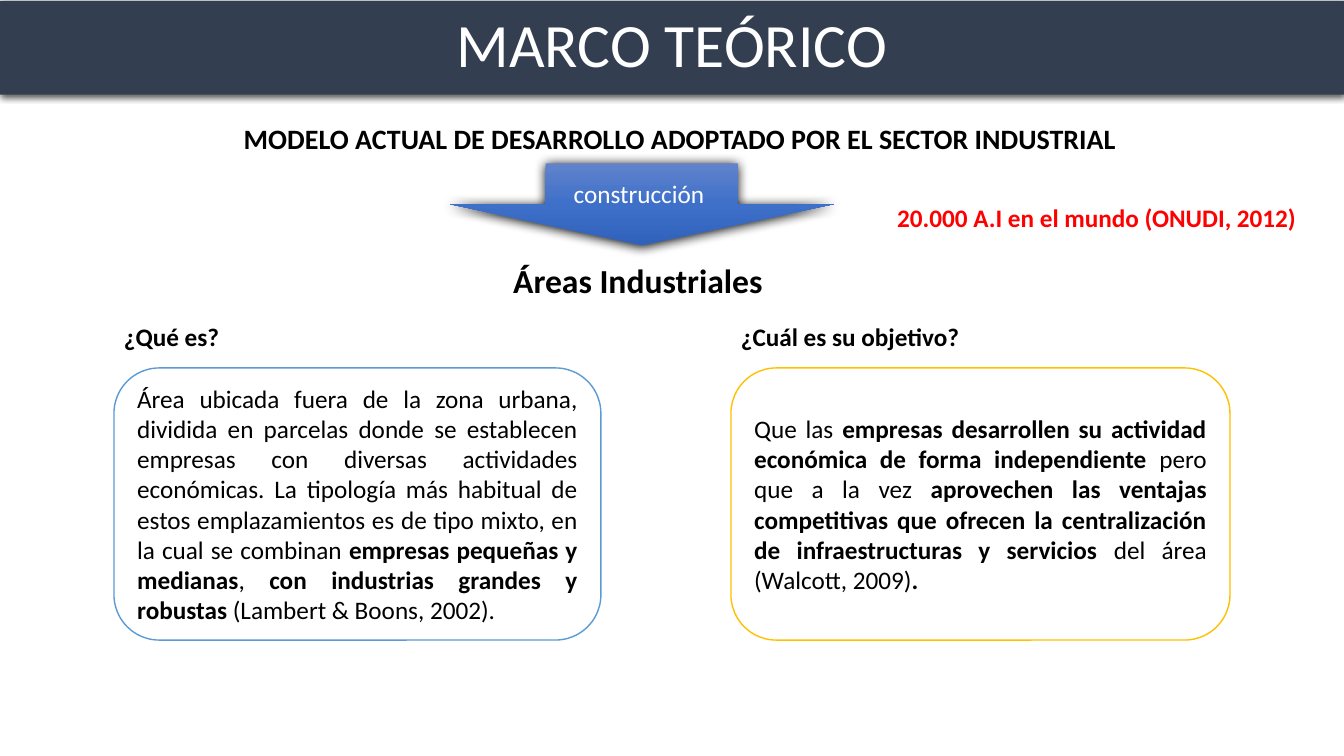
from copy import deepcopy
from dataclasses import dataclass

from lxml.etree import SubElement
from pptx import Presentation
from pptx.dml.color import RGBColor
from pptx.enum.shapes import MSO_SHAPE
from pptx.enum.text import MSO_ANCHOR, PP_ALIGN
from pptx.oxml.ns import qn
from pptx.util import Inches, Pt


@dataclass(frozen=True)
class Theme:
    font: str = "Calibri"
    banner: str = "333F50"
    ink: str = "000000"
    paper: str = "FFFFFF"
    alert: str = "FF0000"
    blue: str = "5B9BD5"
    gold: str = "FFC000"
    arrow: tuple = ("6183CB", "3E70CA", "3062BB")
    title: int = 44
    caption: int = 24
    headline: int = 20
    body: int = 18


THEME = Theme()


@dataclass(frozen=True)
class Box:
    left: int
    top: int
    width: int
    height: int

    def share(self, x, y, w, h):
        """Return an inner box given in percent of this one."""
        return Box(int(self.left + self.width * x / 100),
                   int(self.top + self.height * y / 100),
                   int(self.width * w / 100), int(self.height * h / 100))

    def bounds(self):
        return self.left, self.top, self.width, self.height


def write(shape, runs, size, color=THEME.ink, align=PP_ALIGN.LEFT, wrap=True):
    """Fill a shape with one paragraph of (text, bold) runs."""
    frame = shape.text_frame
    frame.word_wrap = wrap
    para = frame.paragraphs[0]
    para.alignment = align
    for text, bold in runs:
        span = para.add_run()
        span.text = text
        span.font.name = THEME.font
        span.font.size = Pt(size)
        span.font.bold = bold
        span.font.color.rgb = RGBColor.from_string(color)
    return para


def add_label(page, box, text, size, **style):
    write(page.shapes.add_textbox(*box.bounds()), [(text, True)], size, **style)


def add_block(page, box, preset, fill=None, line=None):
    shape = page.shapes.add_shape(preset, *box.bounds())
    shape.shadow.inherit = False
    shape.text_frame.vertical_anchor = MSO_ANCHOR.MIDDLE
    if fill:
        shape.fill.solid()
        shape.fill.fore_color.rgb = RGBColor.from_string(fill)
    if line:
        shape.line.color.rgb = RGBColor.from_string(line)
        shape.line.width = Pt(1)
    else:
        shape.line.fill.background()
    return shape


def drop_shadow(shape, opacity, blur, distance):
    effects = shape.element.spPr.find(qn("a:effectLst"))
    shadow = SubElement(effects, qn("a:outerShdw"), blurRad=str(Pt(blur)),
                        dist=str(Pt(distance)), dir="5400000", rotWithShape="0")
    color = SubElement(shadow, qn("a:srgbClr"), val=THEME.ink)
    SubElement(color, qn("a:alpha"), val=str(opacity * 1000))


def shade_down(shape, colors):
    """Apply an evenly spaced gradient from top to bottom."""
    shape.fill.gradient()
    shape.fill.gradient_angle = 270
    stops = shape.element.spPr.find(qn("a:gradFill")).find(qn("a:gsLst"))
    while len(stops) < len(colors):
        stops.append(deepcopy(stops[0]))
    for index, (stop, color) in enumerate(zip(shape.fill.gradient_stops, colors)):
        stop.position = index / (len(colors) - 1)
        stop.color.rgb = RGBColor.from_string(color)


def add_banner(page, box):
    banner = add_block(page, box, MSO_SHAPE.RECTANGLE, THEME.banner)
    drop_shadow(banner, opacity=63, blur=4.5, distance=1.5)
    para = write(banner, [("MARCO TEÓRICO", False)], THEME.title,
                 THEME.paper, PP_ALIGN.CENTER)
    para.line_spacing = 0.9


def add_flow(page, box):
    """Arrow leading down to its result."""
    add_label(page, box.share(9.19, 64.54, 81.63, 35.46), "Áreas Industriales ",
              THEME.caption, align=PP_ALIGN.CENTER)
    arrow = add_block(page, box.share(0, 0, 100, 57.45), MSO_SHAPE.DOWN_ARROW)
    shade_down(arrow, THEME.arrow)
    drop_shadow(arrow, opacity=100, blur=8.5, distance=1)
    write(arrow, [("construcción ", False)], THEME.body,
          THEME.paper, PP_ALIGN.CENTER)


def add_panel(page, box, question, answer, line):
    """Question above a rounded card with its answer."""
    card = add_block(page, box.share(0, 15.89, 100, 84.11),
                     MSO_SHAPE.ROUNDED_RECTANGLE, THEME.paper, line)
    write(card, answer, THEME.body, align=PP_ALIGN.JUSTIFY)
    add_label(page, box.share(0, 0, 100, 12.46), question, THEME.body)


WHAT = [
    ("Área ubicada fuera de la zona urbana, dividida en parcelas donde se "
     "establecen empresas con diversas actividades económicas. La tipología "
     "más habitual de estos emplazamientos es de tipo mixto, en la cual se "
     "combinan ", False),
    ("empresas pequeñas y medianas", True),
    (", ", False),
    ("con industrias grandes y robustas ", True),
    ("(Lambert & Boons, 2002).", False),
]
GOAL = [
    ("Que las ", False),
    ("empresas desarrollen su actividad económica de forma independiente ", True),
    ("pero que a la vez ", False),
    ("aprovechen las ventajas competitivas que ofrecen la centralización de "
     "infraestructuras y servicios ", True),
    ("del área (Walcott, 2009)", False),
    (".", True),
]


def main():
    deck = Presentation()
    deck.slide_width, deck.slide_height = Inches(13.33), Inches(7.5)
    page = deck.slides.add_slide(deck.slide_layouts[6])
    whole = Box(0, 0, deck.slide_width, deck.slide_height)

    # Headline and the arrow below it
    add_label(page, whole.share(17.4, 15.47, 69.69, 5.87),
              "MODELO ACTUAL DE DESARROLLO ADOPTADO POR EL SECTOR INDUSTRIAL",
              THEME.headline)
    add_flow(page, whole.share(33.46, 21.6, 28.58, 18.8))

    # Two question panels
    add_panel(page, whole.share(8.48, 41.87, 36.23, 42.8),
              "¿Qué es?", WHAT, THEME.blue)
    add_panel(page, whole.share(54.39, 41.87, 37.13, 42.8),
              "¿Cuál es su objetivo?", GOAL, THEME.gold)

    # Side note and title banner
    add_label(page, whole.share(66.02, 26.13, 31.51, 5.33),
              "20.000 A.I en el mundo (ONUDI, 2012)", THEME.body,
              color=THEME.alert, wrap=False)
    add_banner(page, whole.share(0, 0.13, 100, 12.4))
    deck.save("out.pptx")


if __name__ == "__main__":
    main()
